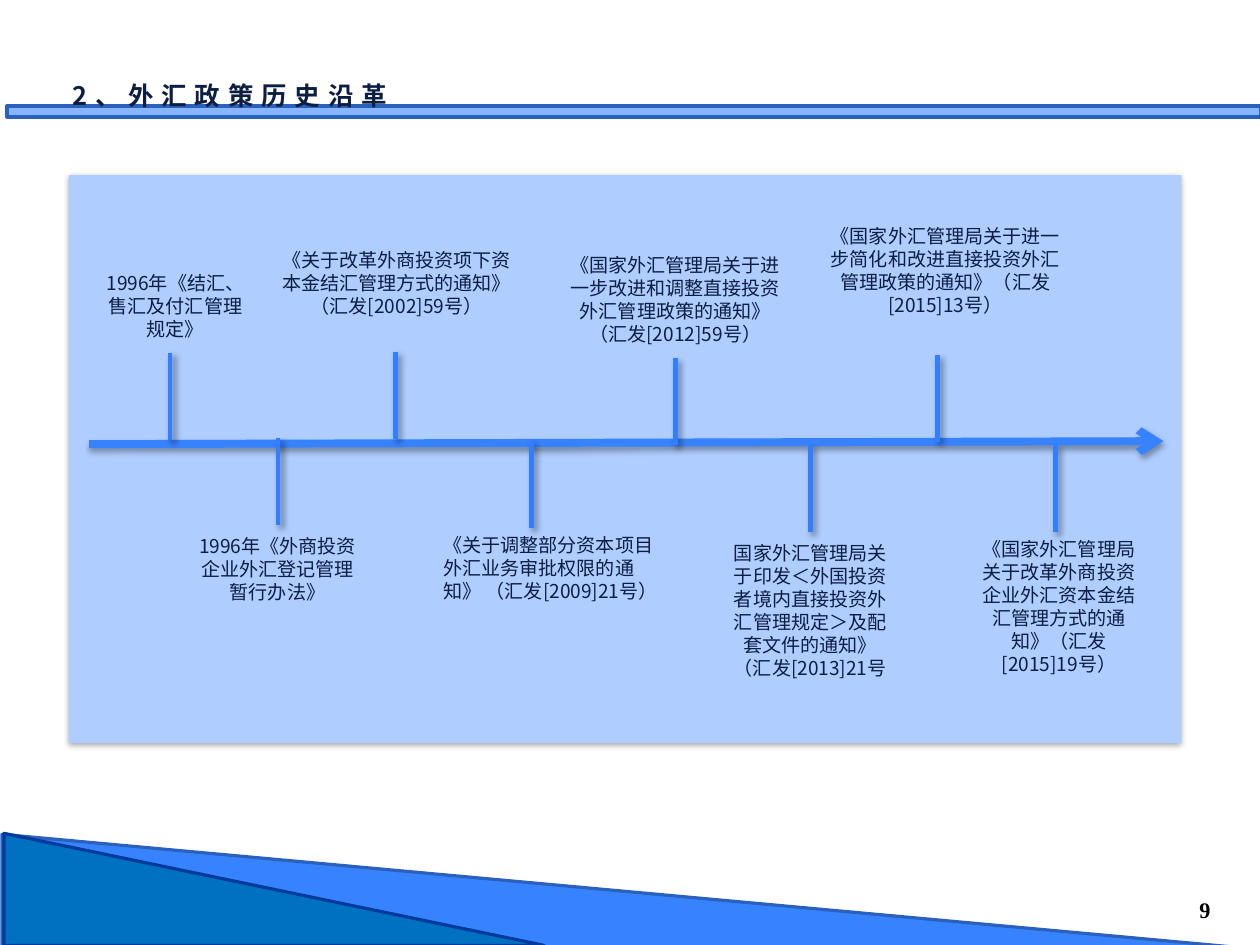
"""Build a timeline slide on the history of foreign exchange policy."""
from lxml import etree
from pptx import Presentation
from pptx.dml.color import RGBColor
from pptx.enum.shapes import MSO_CONNECTOR, MSO_SHAPE
from pptx.enum.text import MSO_ANCHOR, MSO_AUTO_SIZE, PP_ALIGN
from pptx.oxml.ns import qn
from pptx.util import Inches, Pt

STRAIGHT = MSO_CONNECTOR.STRAIGHT
RECTANGLE, TRIANGLE = MSO_SHAPE.RECTANGLE, MSO_SHAPE.RIGHT_TRIANGLE
LEFT, CENTER, RIGHT = PP_ALIGN.LEFT, PP_ALIGN.CENTER, PP_ALIGN.RIGHT

PX = 7986
STEM_LENGTH = 87
SANS, SERIF = "Noto Sans CJK SC", "Times New Roman"
COLORS = {
    "blue": "3783FF", "ocean": "0070C0", "sky": "87B5FF", "panel": "AFCDFF",
    "stem": "317FFE", "edge": "2961BD", "deep": "003B9B",
    "text": "0C1E42", "black": "000000",
}
PANEL_SHADOW = (35, 3.1, 1.8, 90)
STEM_SHADOW = (40, 4, 3, 45)

TITLE = "2、外汇政策历史沿革"
PAGE_NUMBER = "9"
DECORATIONS = [
    (TRIANGLE, (2, 834, 1257, 115), "blue", "edge"),
    (TRIANGLE, (4, 833, 540, 112), "ocean", "deep"),
    (RECTANGLE, (7, 106, 1253, 11), "sky", "edge"),
]
PANEL = (69, 175, 1112, 568)
AXIS = (89, 444, 1163, 441)
EVENTS = [
    ("1996年《结汇、售汇及付汇管理规定》", (93, 266, 165, 81), CENTER, (170, 353)),
    ("1996年《外商投资企业外汇登记管理暂行办法》",
     (185, 529, 185, 108), CENTER, (278, 438)),
    ("《关于改革外商投资项下资本金结汇管理方式的通知》（汇发[2002]59号）",
     (267, 243, 259, 81), CENTER, (395, 352)),
    ("《关于调整部分资本项目外汇业务审批权限的通知》 （汇发[2009]21号）",
     (432, 528, 244, 81), LEFT, (531, 441)),
    ("《国家外汇管理局关于进一步改进和调整直接投资外汇管理政策的通知》（汇发[2012]59号）",
     (550, 248, 250, 104), CENTER, (675, 358)),
    ("国家外汇管理局关于印发＜外国投资者境内直接投资外汇管理规定＞及配套文件的通知》（汇发[2013]21号",
     (720, 536, 180, 150), CENTER, (810, 445)),
    ("《国家外汇管理局关于进一步简化和改进直接投资外汇管理政策的通知》（汇发[2015]13号）",
     (810, 219, 270, 104), CENTER, (937, 355)),
    ("《国家外汇管理局关于改革外商投资企业外汇资本金结汇管理方式的通知》（汇发[2015]19号）",
     (964, 532, 189, 127), CENTER, (1055, 445)),
]


def scaled(lengths):
    return [length * PX for length in lengths]


def color(name):
    return RGBColor.from_string(COLORS[name])


def add_shadow(shape, shadow):
    alpha, blur, distance, direction = shadow
    properties = shape._element.spPr
    for old in properties.findall(qn("a:effectLst")):
        properties.remove(old)
    effects = etree.SubElement(properties, qn("a:effectLst"))
    outer = etree.SubElement(
        effects, qn("a:outerShdw"), blurRad=str(Pt(blur)), dist=str(Pt(distance)),
        dir=str(direction * 60000), rotWithShape="0")
    tint = etree.SubElement(outer, qn("a:srgbClr"), val=COLORS["black"])
    etree.SubElement(tint, qn("a:alpha"), val=str(alpha * 1000))


def add_block(slide, kind, box, fill, edge=None):
    shape = slide.shapes.add_shape(kind, *scaled(box))
    shape.shadow.inherit = False
    shape.fill.solid()
    shape.fill.fore_color.rgb = color(fill)
    if edge:
        shape.line.color.rgb = color(edge)
        shape.line.width = Pt(2)
    else:
        shape.line.fill.background()
    return shape


def add_line(slide, points, name, width, shadow, arrow=False):
    connector = slide.shapes.add_connector(STRAIGHT, *scaled(points))
    connector.line.color.rgb = color(name)
    connector.line.width = Pt(width)
    if arrow:
        etree.SubElement(connector.line._get_or_add_ln(), qn("a:tailEnd"), type="arrow")
    add_shadow(connector, shadow)


def add_text(slide, text, box, size, align=LEFT, font=SANS, name="text",
             bold=False, wrap=True, spacing=0):
    shape = slide.shapes.add_textbox(*scaled(box))
    frame = shape.text_frame
    frame.word_wrap = wrap
    frame.auto_size = MSO_AUTO_SIZE.SHAPE_TO_FIT_TEXT
    paragraph = frame.paragraphs[0]
    paragraph.alignment = align
    run = paragraph.add_run()
    run.text = text
    run.font.size = Pt(size)
    run.font.bold = bold
    run.font.name = font
    run.font.color.rgb = color(name)
    properties = run._r.get_or_add_rPr()
    etree.SubElement(properties, qn("a:ea"), typeface=font)
    if spacing:
        properties.set("spc", str(spacing * 100))
    return frame


def main():
    presentation = Presentation()
    presentation.slide_width = Inches(11)
    presentation.slide_height = Inches(8.25)
    slide = presentation.slides.add_slide(presentation.slide_layouts[6])

    for decoration in DECORATIONS:
        add_block(slide, *decoration)
    number = add_text(slide, PAGE_NUMBER, (1159, 875, 51, 48), 14, RIGHT, SERIF,
                      "black", bold=True, wrap=False)
    number.auto_size = MSO_AUTO_SIZE.NONE
    number.vertical_anchor = MSO_ANCHOR.BOTTOM
    number.margin_left = number.margin_right = 0
    number.margin_top = number.margin_bottom = 0

    add_shadow(add_block(slide, RECTANGLE, PANEL, "panel"), PANEL_SHADOW)
    add_line(slide, AXIS, "blue", 5, PANEL_SHADOW, arrow=True)
    for text, box, align, (x, top) in EVENTS:
        add_line(slide, (x, top, x, top + STEM_LENGTH), "stem", 3, STEM_SHADOW)
        add_text(slide, text, box, 12, align)
    add_text(slide, TITLE, (61, 74, 350, 42), 16, bold=True, wrap=False, spacing=5)

    presentation.save("out.pptx")


if __name__ == "__main__":
    main()
